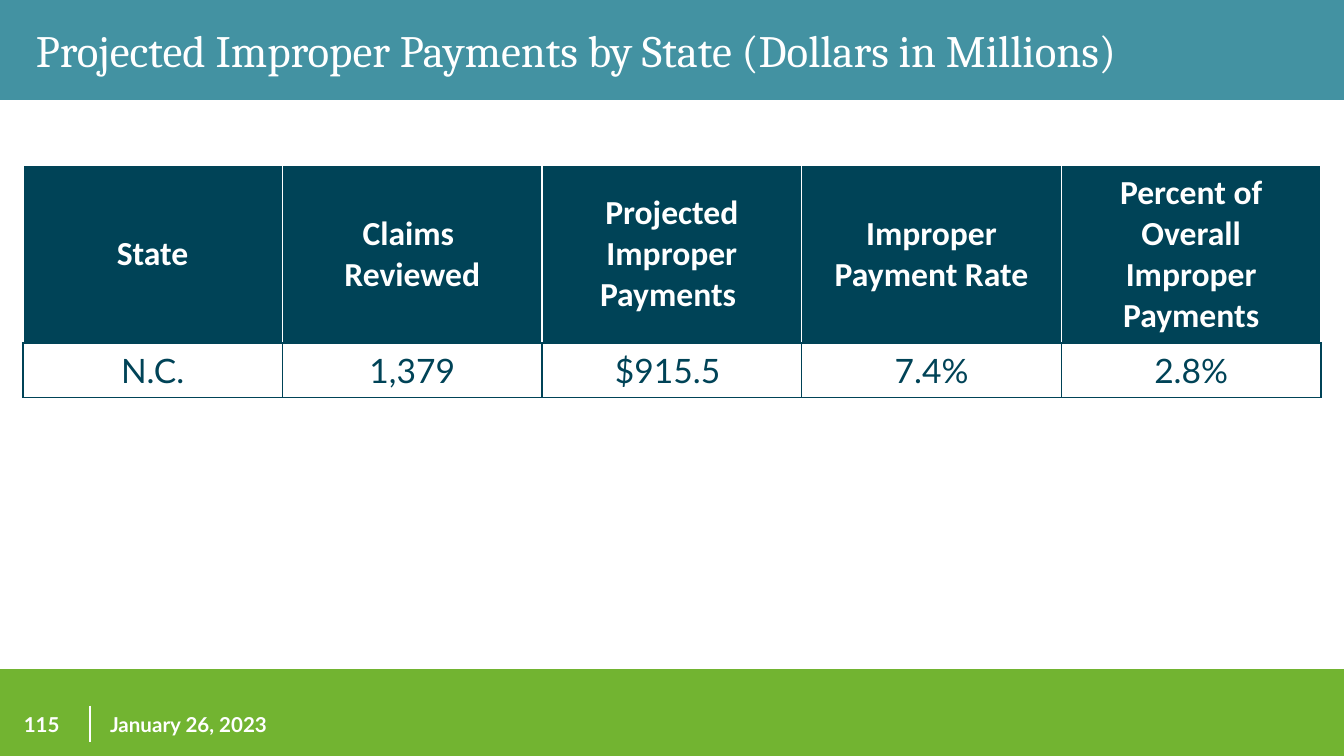
from lxml import etree
from pptx import Presentation
from pptx import util as u
from pptx.dml.color import RGBColor
from pptx.enum import shapes, text
from pptx.oxml.ns import qn

TITLE = "Projected Improper Payments by State (Dollars in Millions)"
PAGE = "115"
DATE = "January 26, 2023"
ROWS = [
    ["State", "Claims \nReviewed", "Projected Improper Payments ",
     "Improper Payment Rate", "Percent of Overall Improper Payments"],
    ["N.C.", "1,379", "$915.5 ", "7.4%", "2.8%"],
]
THEME = {
    "teal": "4392A2", "green": "72B431", "navy": "004357", "white": "FFFFFF",
    "title_font": "Cambria", "head_font": "Calibri", "body_font": "Lato",
    "title_size": 24, "table_size": 18, "footer_size": 11,
}
WIDTH, HEIGHT = 25.4, 14.29
FOOTER_TOP, FOOTER_HEIGHT = 13.34, 0.69
TABLE_LEFT, TABLE_TOP, TABLE_WIDTH = 0.43, 3.13, 24.54
ROW_HEIGHTS = [3.35, 1.03]


def color(name):
    return RGBColor.from_string(THEME[name])


def write(tf, content, *, font, size, fill="white", bold=False, align=text.PP_ALIGN.LEFT):
    tf.word_wrap = True
    for i, line in enumerate(content.split("\n")):
        p = tf.paragraphs[0] if i == 0 else tf.add_paragraph()
        p.alignment = align
        r = p.add_run()
        r.text = line
        r.font.name = THEME[font]
        r.font.size = u.Pt(THEME[size])
        r.font.bold = bold
        r.font.color.rgb = color(fill)


def add_text(s, left, top, width, height, content, **fmt):
    sp = s.shapes.add_textbox(*map(u.Cm, (left, top, width, height)))
    sp.text_frame.vertical_anchor = text.MSO_ANCHOR.MIDDLE
    write(sp.text_frame, content, **fmt)


def add_band(s, top, height, fill):
    sp = s.shapes.add_shape(shapes.MSO_SHAPE.RECTANGLE, 0, u.Cm(top), u.Cm(WIDTH), u.Cm(height))
    sp.shadow.inherit = False
    sp.fill.solid()
    sp.fill.fore_color.rgb = color(fill)
    sp.line.fill.background()
    return sp


def set_borders(cell, **sides):
    tc_pr = cell._tc.get_or_add_tcPr()
    for i, side in enumerate("LRTB"):
        ln = etree.Element(qn(f"a:ln{side}"), w=str(u.Pt(1)))
        solid = etree.SubElement(ln, qn("a:solidFill"))
        etree.SubElement(solid, qn("a:srgbClr"), val=THEME[sides[side]])
        tc_pr.insert(i, ln)


def add_payment_table(s):
    table = s.shapes.add_table(
        len(ROWS), len(ROWS[0]), u.Cm(TABLE_LEFT), u.Cm(TABLE_TOP),
        u.Cm(TABLE_WIDTH), u.Cm(sum(ROW_HEIGHTS))).table
    for column in table.columns:
        column.width = u.Cm(TABLE_WIDTH / len(ROWS[0]))
    for i, (row, height) in enumerate(zip(ROWS, ROW_HEIGHTS)):
        table.rows[i].height = u.Cm(height)
        head = i == 0
        edge = "white" if head else "navy"
        for j, content in enumerate(row):
            cell = table.cell(i, j)
            cell.vertical_anchor = text.MSO_ANCHOR.MIDDLE
            cell.fill.solid()
            cell.fill.fore_color.rgb = color("navy" if head else "white")
            set_borders(cell, L=edge, R=edge, T="white" if head else "navy", B="navy")
            write(cell.text_frame, content, font="head_font" if head else "body_font",
                  size="table_size", fill=edge, bold=head, align=text.PP_ALIGN.CENTER)


def main():
    prs = Presentation()
    prs.slide_width, prs.slide_height = u.Cm(WIDTH), u.Cm(HEIGHT)
    s = prs.slides.add_slide(prs.slide_layouts[6])

    add_band(s, 12.65, HEIGHT - 12.65, "green")
    banner = add_band(s, 0, 1.85, "teal")
    banner.line.color.rgb = color("teal")
    banner.line.width = u.Pt(2)

    divider = s.shapes.add_connector(
        shapes.MSO_CONNECTOR.STRAIGHT, u.Cm(1.7), u.Cm(FOOTER_TOP),
        u.Cm(1.7), u.Cm(FOOTER_TOP + FOOTER_HEIGHT))
    divider.line.color.rgb = color("white")
    divider.line.width = u.Pt(1)
    etree.SubElement(divider._element.spPr, qn("a:effectLst"))

    for left, width, content in [(0.2, 1.55, PAGE), (1.83, 5.08, DATE)]:
        add_text(s, left, FOOTER_TOP, width, FOOTER_HEIGHT, content,
                 font="body_font", size="footer_size", bold=True)
    add_text(s, 0.43, -0.38, 24.56, 2.64, TITLE, font="title_font", size="title_size")
    add_payment_table(s)
    prs.save("out.pptx")


if __name__ == "__main__":
    main()
